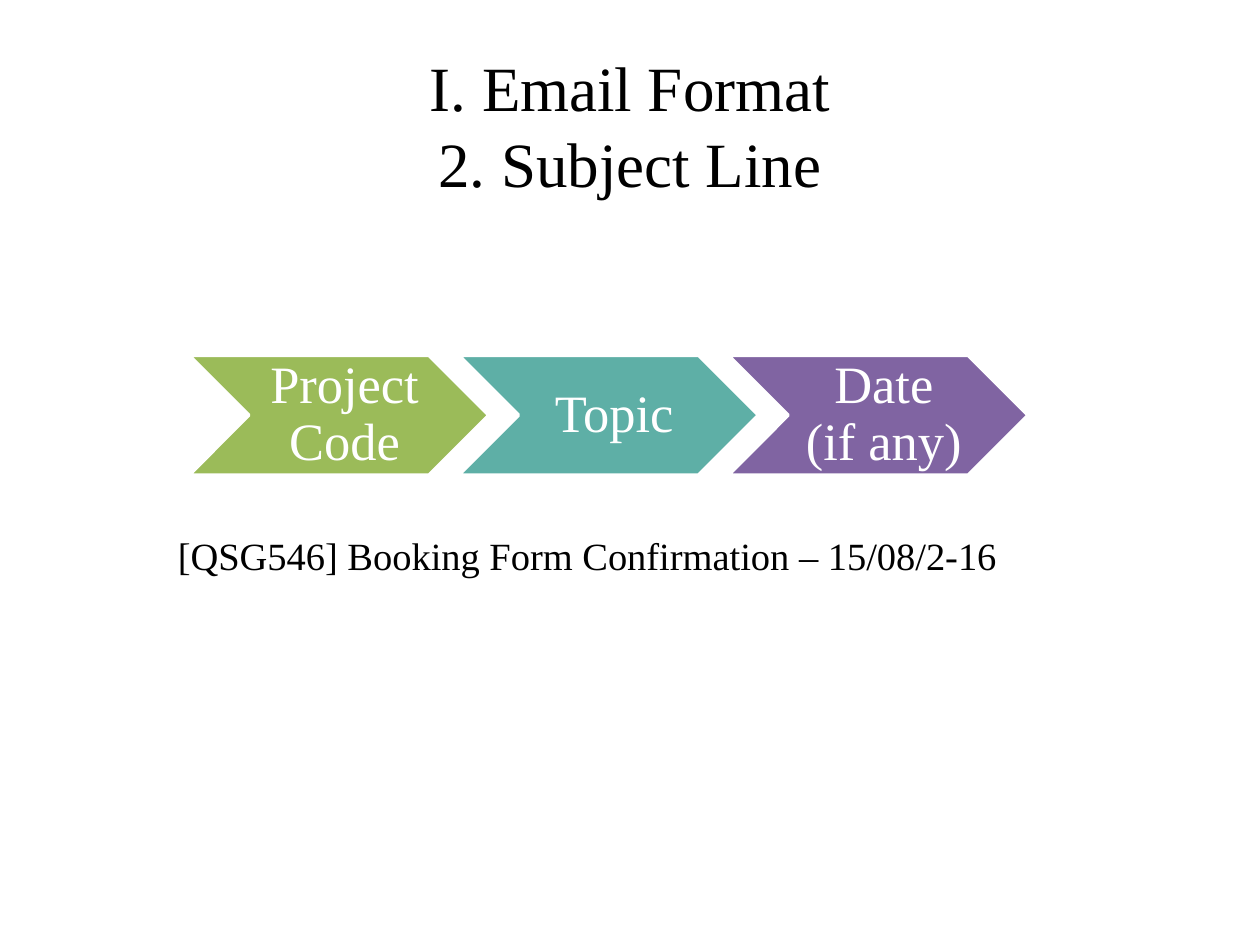
from pptx import Presentation
from pptx import util as u
from pptx.dml.color import RGBColor
from pptx.enum import shapes, text

BLACK = RGBColor(0x00, 0x00, 0x00)
WHITE = RGBColor(0xFF, 0xFF, 0xFF)
GREEN = RGBColor(0x9B, 0xBB, 0x59)
TEAL = RGBColor(0x5E, 0xAF, 0xA6)
PURPLE = RGBColor(0x80, 0x64, 0xA2)


class SlideBuilder:
    font_name = "Times New Roman"
    label_frame = {
        "margin_left": u.Inches(0.13),
        "margin_top": u.Inches(0.04),
        "margin_right": u.Inches(0.04),
        "margin_bottom": u.Inches(0.04),
    }
    label_paragraph = {"line_spacing": 0.9}

    def __init__(self, slide):
        self.slide = slide

    @staticmethod
    def apply(target, values):
        for name, value in values.items():
            setattr(target, name, value)

    def add_text(self, content, box, size, color, anchor=text.MSO_ANCHOR.MIDDLE,
                 frame_format=None, paragraph_format=None):
        shape = self.slide.shapes.add_textbox(*map(u.Inches, box))
        frame = shape.text_frame
        self.apply(frame, {"word_wrap": True, "vertical_anchor": anchor,
                           **(frame_format or {})})
        paragraph = frame.paragraphs[0]
        paragraph.text = content
        self.apply(paragraph, {"alignment": text.PP_ALIGN.CENTER,
                               **(paragraph_format or {})})
        font = paragraph.runs[0].font
        for run in paragraph.runs:
            font = run.font
            self.apply(font, {"name": self.font_name, "size": u.Pt(size)})
            font.color.rgb = color
        return shape

    def add_chevron(self, label, box, color):
        shape = self.slide.shapes.add_shape(
            shapes.MSO_SHAPE.CHEVRON, *map(u.Inches, box))
        shape.shadow.inherit = False
        shape.fill.solid()
        shape.fill.fore_color.rgb = color
        shape.line.color.rgb = WHITE
        shape.line.width = u.Pt(2)
        # The label sits between the notch and the point
        left, top, width, height = box
        inset = height / 2
        self.add_text(label, (left + inset, top, width - 2 * inset, height), 30, WHITE,
                      frame_format=self.label_frame,
                      paragraph_format=self.label_paragraph)


def main():
    presentation = Presentation()
    presentation.slide_width = u.Inches(10)
    presentation.slide_height = u.Inches(7.5)
    builder = SlideBuilder(presentation.slides.add_slide(presentation.slide_layouts[6]))

    # Title
    builder.add_text("I. Email Format\v2. Subject Line", (0.5, 0.58, 9, 0.81), 36, BLACK)

    # Parts of the subject line
    parts = [("Project Code", GREEN), ("Topic", TEAL), ("Date (if any)", PURPLE)]
    for index, (label, color) in enumerate(parts):
        builder.add_chevron(label, (1.5 + 2.14 * index, 2.82, 2.38, 0.95), color)

    # Example
    example = builder.add_text("[QSG546] Booking Form Confirmation – 15/08/2-16",
                               (1.15, 4.17, 7.02, 0.47), 22, BLACK,
                               anchor=text.MSO_ANCHOR.TOP)
    example.text_frame.auto_size = text.MSO_AUTO_SIZE.SHAPE_TO_FIT_TEXT

    presentation.save("out.pptx")


if __name__ == "__main__":
    main()
